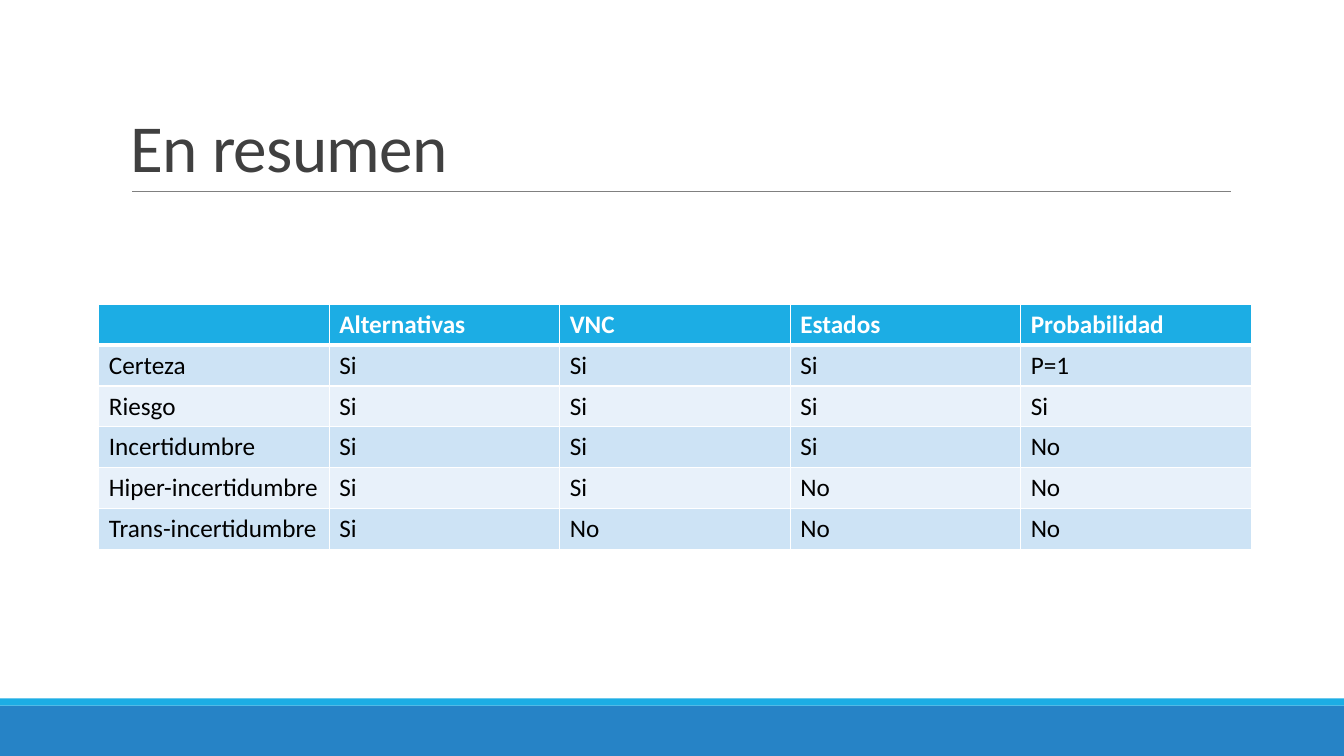
from lxml.etree import SubElement
from pptx import Presentation
from pptx.dml.color import RGBColor
from pptx.enum.shapes import MSO_CONNECTOR, MSO_SHAPE
from pptx.enum.text import MSO_ANCHOR
from pptx.oxml.ns import qn
from pptx.util import Inches, Pt

TITLE = "En resumen"
ROWS = [
    ("", "Alternativas", "VNC", "Estados", "Probabilidad"),
    ("Certeza", "Si", "Si", "Si", "P=1"),
    ("Riesgo", "Si", "Si", "Si", "Si"),
    ("Incertidumbre", "Si", "Si", "Si", "No"),
    ("Hiper-incertidumbre", "Si", "Si", "No", "No"),
    ("Trans-incertidumbre", "Si", "No", "No", "No"),
]
COLORS = {
    "footer": "2683C6",
    "accent": "1CADE4",
    "rule": "808080",
    "title": "404040",
    "white": "FFFFFF",
    "black": "000000",
    "odd_row": "CDE3F5",
    "even_row": "E8F1FA",
}
FONT = "Calibri"
FOOTER_BANDS = [(7, 0.5, "footer"), (6.93, 0.07, "accent")]  # top, height, color
TABLE_LEFT, TABLE_TOP, TABLE_WIDTH, TABLE_HEIGHT = 0.98, 3.02, 11.43, 2.43


def color(name):
    return RGBColor.from_string(COLORS[name])


def style_font(font, size, color_name, bold=False):
    font.name = FONT
    font.size = Pt(size)
    font.bold = bold
    font.color.rgb = color(color_name)


def add_footer(slide, slide_width):
    for top, height, fill_name in FOOTER_BANDS:
        band = slide.shapes.add_shape(
            MSO_SHAPE.RECTANGLE, 0, Inches(top), slide_width, Inches(height))
        band.shadow.inherit = False
        band.fill.solid()
        band.fill.fore_color.rgb = color(fill_name)
        band.line.fill.background()


def add_title(slide):
    rule = slide.shapes.add_connector(
        MSO_CONNECTOR.STRAIGHT, Inches(1.31), Inches(1.9), Inches(12.21), Inches(1.9))
    rule.line.color.rgb = color("rule")
    rule.line.width = Pt(0.5)
    SubElement(rule._element.spPr, qn("a:effectLst"))

    box = slide.shapes.add_textbox(Inches(1.2), Inches(0.31), Inches(11), Inches(1.59))
    frame = box.text_frame
    frame.word_wrap = True
    frame.vertical_anchor = MSO_ANCHOR.BOTTOM
    paragraph = frame.paragraphs[0]
    paragraph.line_spacing = 0.85
    run = paragraph.add_run()
    run.text = TITLE
    style_font(run.font, 48, "title")
    run.font._element.set("spc", "-50")


def add_borders(cell, widths):
    """Draw white borders; widths maps each side (L, R, T, B) to points."""
    properties = cell._tc.get_or_add_tcPr()
    for side, width in widths.items():
        border = SubElement(properties, qn(f"a:ln{side}"), w=str(Pt(width)))
        fill = SubElement(border, qn("a:solidFill"))
        SubElement(fill, qn("a:srgbClr"), val=COLORS["white"])


def add_summary_table(slide):
    table = slide.shapes.add_table(
        len(ROWS), len(ROWS[0]), Inches(TABLE_LEFT), Inches(TABLE_TOP),
        Inches(TABLE_WIDTH), Inches(TABLE_HEIGHT)).table
    for row_index, row in enumerate(ROWS):
        is_header = row_index == 0
        if is_header:
            fill_name = "accent"
        else:
            fill_name = "odd_row" if row_index % 2 else "even_row"
        widths = {"L": 1, "R": 1, "T": 3 if row_index == 1 else 1, "B": 3 if is_header else 1}
        for column_index, text in enumerate(row):
            cell = table.cell(row_index, column_index)
            cell.text = text
            style_font(cell.text_frame.paragraphs[0].font, 18,
                       "white" if is_header else "black", bold=is_header)
            add_borders(cell, widths)
            cell.fill.solid()
            cell.fill.fore_color.rgb = color(fill_name)


def main():
    presentation = Presentation()
    presentation.slide_width = Inches(13.33)
    presentation.slide_height = Inches(7.5)
    slide = presentation.slides.add_slide(presentation.slide_layouts[6])
    add_footer(slide, presentation.slide_width)
    add_title(slide)
    add_summary_table(slide)
    presentation.save("out.pptx")


if __name__ == "__main__":
    main()
